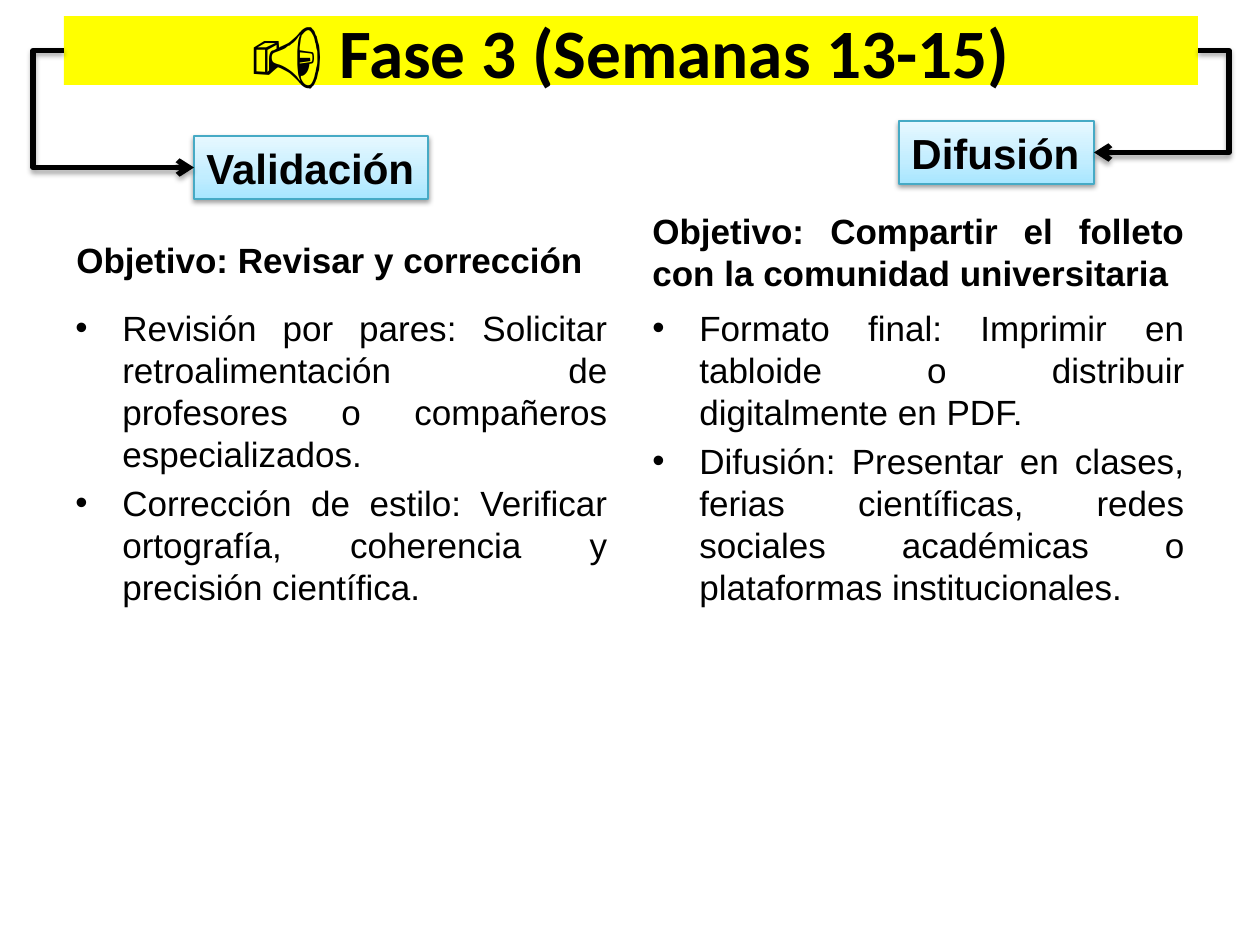
from copy import deepcopy
from dataclasses import dataclass

from lxml.etree import SubElement
from pptx import Presentation
from pptx.dml.color import RGBColor
from pptx.enum.shapes import MSO_CONNECTOR, MSO_SHAPE
from pptx.enum.text import MSO_ANCHOR as Anchor, PP_ALIGN as Align
from pptx.oxml.ns import qn
from pptx.util import Pt

# Content: boxes are left, top, width, height in px
TITLE = ("📢 Fase 3 (Semanas 13-15)", (64, 16, 1134, 69))
BRANCHES = [
    {
        "stage": ("Validación", (194, 136, 234, 63)),
        "goal": ("Objetivo: Revisar y corrección", (64, 199, 557, 88), Align.LEFT),
        "tasks": ([
            "Revisión por pares: Solicitar retroalimentación de profesores o "
            "compañeros especializados.",
            "Corrección de estilo: Verificar ortografía, coherencia y "
            "precisión científica.",
        ], (63, 300, 557, 544)),
        "side": -1,
    },
    {
        "stage": ("Difusión", (899, 121, 195, 63)),
        "goal": ("Objetivo: Compartir el folleto con la comunidad universitaria",
                 (640, 212, 557, 88), Align.JUSTIFY),
        "tasks": ([
            "Formato final: Imprimir en tabloide o distribuir digitalmente en PDF.",
            "Difusión: Presentar en clases, ferias científicas, redes sociales "
            "académicas o plataformas institucionales.",
        ], (640, 300, 557, 544)),
        "side": 1,
    },
]
LOOP = 31  # how far each arrow swings out beyond the title
INDENT = 47


@dataclass(frozen=True)
class Theme:
    ink: str = "000000"
    banner: str = "FFFF00"
    stage_line: str = "46AAC5"
    stage_fill: tuple = ((0, "A7E6FF"), (0.35, "C1EDFF"), (1, "E7F8FF"))
    title_font: str = "Calibri"
    body_font: str = "Arial"
    title_size: float = 39.6
    stage_size: float = 24
    body_size: float = 20


THEME = Theme()
rgb = RGBColor.from_string


def px(*lengths):
    return [round(length * 914400 / 126) for length in lengths]


def write(paragraph, text, size, font=THEME.body_font, bold=True):
    run = paragraph.add_run()
    run.text = text
    run.font.size, run.font.name, run.font.bold = Pt(size), font, bold
    run.font.color.rgb = rgb(THEME.ink)


def add_shadow(effects, alpha, distance):
    shadow = SubElement(effects, qn("a:outerShdw"), blurRad=str(Pt(3.1)),
                        dist=str(Pt(distance)), dir="5400000", rotWithShape="0")
    color = SubElement(shadow, qn("a:srgbClr"), val=THEME.ink)
    SubElement(color, qn("a:alpha"), val=str(alpha * 1000))


def add_box(slide, box):
    shape = slide.shapes.add_shape(MSO_SHAPE.RECTANGLE, *px(*box))
    shape.shadow.inherit = False
    return shape


def add_title(slide, text, box):
    banner = add_box(slide, box)
    banner.fill.solid()
    banner.fill.fore_color.rgb = rgb(THEME.banner)
    banner.line.fill.background()
    frame = banner.text_frame
    frame.word_wrap, frame.vertical_anchor = True, Anchor.MIDDLE
    frame.paragraphs[0].alignment = Align.CENTER
    write(frame.paragraphs[0], text, THEME.title_size, THEME.title_font)


def add_body(slide, texts, box, align, anchor, bulleted):
    frame = slide.shapes.add_textbox(*px(*box)).text_frame
    frame.word_wrap, frame.vertical_anchor = True, anchor
    for i, text in enumerate(texts):
        paragraph = frame.add_paragraph() if i else frame.paragraphs[0]
        paragraph.alignment = align
        paragraph.space_before = Pt(THEME.body_size * 0.2)
        if bulleted:
            props = paragraph._p.get_or_add_pPr()
            indent = px(INDENT)[0]
            props.set("marL", str(indent))
            props.set("indent", str(-indent))
            SubElement(props, qn("a:buFont"), typeface=THEME.body_font)
            SubElement(props, qn("a:buChar"), char="•")
        write(paragraph, text, THEME.body_size, bold=not bulleted)


def add_stage(slide, text, box):
    stage = add_box(slide, box)
    stage.fill.gradient()
    stage.fill.gradient_angle = 90
    stop_list = stage._element.spPr.find(qn("a:gradFill")).find(qn("a:gsLst"))
    stop_list.append(deepcopy(stop_list[0]))
    for stop, (position, color) in zip(stage.fill.gradient_stops, THEME.stage_fill):
        stop.position, stop.color.rgb = position, rgb(color)
    stage.line.color.rgb, stage.line.width = rgb(THEME.stage_line), Pt(0.75)
    add_shadow(stage._element.spPr.find(qn("a:effectLst")), 38, 1.6)
    frame = stage.text_frame
    frame.word_wrap, frame.vertical_anchor = False, Anchor.TOP
    frame.paragraphs[0].alignment = Align.LEFT
    write(frame.paragraphs[0], text, THEME.stage_size)


def add_arrow(slide, title_box, stage_box, side):
    def outer_middle(box):
        left, top, width, height = box
        return left + (width if side > 0 else 0), top + height / 2

    start, end = outer_middle(title_box), outer_middle(stage_box)
    arrow = slide.shapes.add_connector(MSO_CONNECTOR.ELBOW, *px(*start, *end))
    arrow.line.color.rgb, arrow.line.width = rgb(THEME.ink), Pt(3)
    props = arrow._element.spPr
    SubElement(props.find(qn("a:ln")), qn("a:tailEnd"), type="arrow")
    add_shadow(SubElement(props, qn("a:effectLst")), 35, 1.8)
    # A negative adjustment bends the elbow outward past its start
    bend = round(-LOOP / abs(end[0] - start[0]) * 100000)
    guides = props.find(qn("a:prstGeom")).get_or_add_avLst()
    SubElement(guides, qn("a:gd"), name="adj1", fmla=f"val {bend}")


def main():
    deck = Presentation()
    deck.slide_width, deck.slide_height = px(1260, 945)
    slide = deck.slides.add_slide(deck.slide_layouts[6])

    add_title(slide, *TITLE)

    # Objective and tasks of each branch
    for branch in BRANCHES:
        goal, goal_box, align = branch["goal"]
        add_body(slide, [goal], goal_box, align, Anchor.BOTTOM, False)
        add_body(slide, *branch["tasks"], Align.JUSTIFY, Anchor.TOP, True)

    # Stage labels, then the arrows that reach them from the title
    for branch in BRANCHES:
        add_stage(slide, *branch["stage"])
    for branch in BRANCHES:
        add_arrow(slide, TITLE[1], branch["stage"][1], branch["side"])

    deck.save("out.pptx")


if __name__ == "__main__":
    main()
